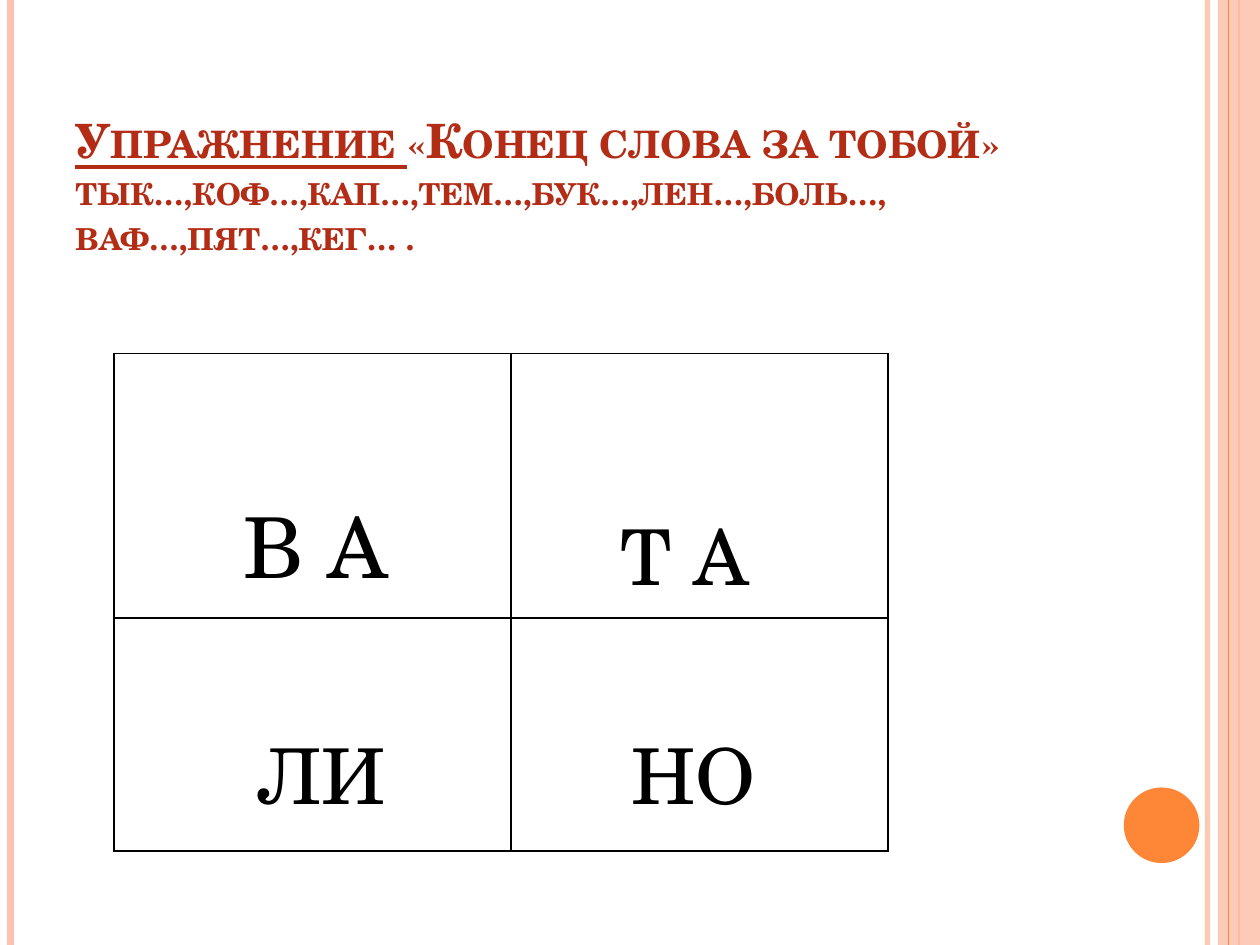
from dataclasses import dataclass

from lxml import etree
from pptx import Presentation
from pptx import util as u
from pptx.dml.color import RGBColor
from pptx.enum import shapes, text
from pptx.oxml import ns


@dataclass(frozen=True)
class Theme:
    font: str = "TeX Gyre Schola"
    accent: str = "FE8637"
    pale: str = "FEC3AE"
    title: str = "B32C16"
    ink: str = "000000"
    heading_size: float = 27
    words_size: float = 21.6
    syllable_size: float = 44
    large_syllable_size: float = 48


class SlideBuilder:
    """Draws styled elements on one slide, with lengths in points."""

    def __init__(self, slide, theme):
        self.slide = slide
        self.theme = theme

    def child(self, parent, tag, **attributes):
        return etree.SubElement(parent, ns.qn(tag), attributes)

    def set_alpha(self, shape, percent):
        for color in shape._element.spPr.iter(ns.qn("a:srgbClr")):
            self.child(color, "a:alpha", val=str(percent * 1000))

    def format_run(self, run, size, color):
        run.font.name = self.theme.font
        run.font.size = u.Pt(size)
        run.font.color.rgb = RGBColor.from_string(color)

    def stripe(self, x, width, color, alpha=100):
        line = self.slide.shapes.add_connector(
            shapes.MSO_CONNECTOR.STRAIGHT, u.Pt(x), u.Pt(0), u.Pt(x), u.Pt(540))
        line.line.width = u.Pt(width)
        line.line.color.rgb = RGBColor.from_string(color)
        if alpha < 100:
            self.set_alpha(line, alpha)
        self.child(line._element.spPr, "a:effectLst")

    def solid(self, kind, left, top, width, height, color, alpha=100):
        shape = self.slide.shapes.add_shape(
            kind, u.Pt(left), u.Pt(top), u.Pt(width), u.Pt(height))
        shape.shadow.inherit = False
        shape.fill.solid()
        shape.fill.fore_color.rgb = RGBColor.from_string(color)
        shape.line.fill.background()
        if alpha < 100:
            self.set_alpha(shape, alpha)

    def title(self, left, top, width, height, underlined, rest, word_lines):
        box = self.slide.shapes.add_textbox(
            u.Pt(left), u.Pt(top), u.Pt(width), u.Pt(height))
        frame = box.text_frame
        frame.word_wrap = True
        frame.vertical_anchor = text.MSO_ANCHOR.BOTTOM
        frame.text = "\n".join([underlined, *word_lines])
        heading = frame.paragraphs[0]
        heading.add_run().text = rest
        heading.runs[0].font.underline = True
        sizes = [self.theme.heading_size] + [self.theme.words_size] * len(word_lines)
        for paragraph, size in zip(frame.paragraphs, sizes):
            for run in paragraph.runs:
                self.format_run(run, size, self.theme.title)
                run.font.bold = True
                run._r.get_or_add_rPr().set("cap", "small")

    def border(self, cell):
        properties = cell._tc.get_or_add_tcPr()
        for side in ("a:lnL", "a:lnR", "a:lnT", "a:lnB"):
            line = self.child(properties, side, w=str(u.Pt(1)))
            fill = self.child(line, "a:solidFill")
            self.child(fill, "a:srgbClr", val=self.theme.ink)

    def table(self, left, top, widths, heights, rows):
        frame = self.slide.shapes.add_table(
            len(heights), len(widths), u.Pt(left), u.Pt(top),
            u.Pt(sum(widths)), u.Pt(sum(heights)))
        table = frame.table
        table.first_row = table.horz_banding = False
        for column, width in zip(table.columns, widths):
            column.width = u.Pt(width)
        for row, height, contents in zip(table.rows, heights, rows):
            row.height = u.Pt(height)
            for cell, content in zip(row.cells, contents):
                syllable, size, indent, bottom = content
                self.border(cell)
                cell.fill.background()
                cell.vertical_anchor = text.MSO_ANCHOR.BOTTOM
                cell.margin_left = u.Pt(indent)
                cell.margin_bottom = u.Pt(bottom)
                cell.text_frame.text = syllable
                self.format_run(cell.text_frame.paragraphs[0].runs[0], size, self.theme.ink)


def main():
    presentation = Presentation()
    presentation.slide_width, presentation.slide_height = u.Pt(720), u.Pt(540)
    theme = Theme()
    slide = presentation.slides.add_slide(presentation.slide_layouts[6])
    builder = SlideBuilder(slide, theme)

    builder.stripe(690, 3, theme.pale, 93)
    builder.stripe(6, 4.5, theme.pale)
    builder.stripe(708, 1.5, theme.accent)
    builder.solid(shapes.MSO_SHAPE.RECTANGLE, 696, 0, 24, 540, theme.pale, 87)
    builder.stripe(702, 0.75, theme.accent)
    builder.solid(shapes.MSO_SHAPE.OVAL, 642.2, 450, 43.2, 43.2, theme.accent)

    builder.title(
        36, 21.6, 588, 129.6, "Упражнение ", "«Конец слова за тобой»",
        ["тык…,коф…,кап…,тем…,бук…,лен…,боль…,", "ваф…,пят…,кег… ."])
    normal, large = theme.syllable_size, theme.large_syllable_size
    builder.table(65.2, 202, [226.8, 215.5], [151.2, 133.2], [
        [("В А", large, 74, 6.6), ("Т А", normal, 62.6, 4)],
        [("ЛИ", normal, 82.6, 12), ("НО", normal, 68.6, 12)],
    ])
    presentation.save("out.pptx")


if __name__ == "__main__":
    main()
